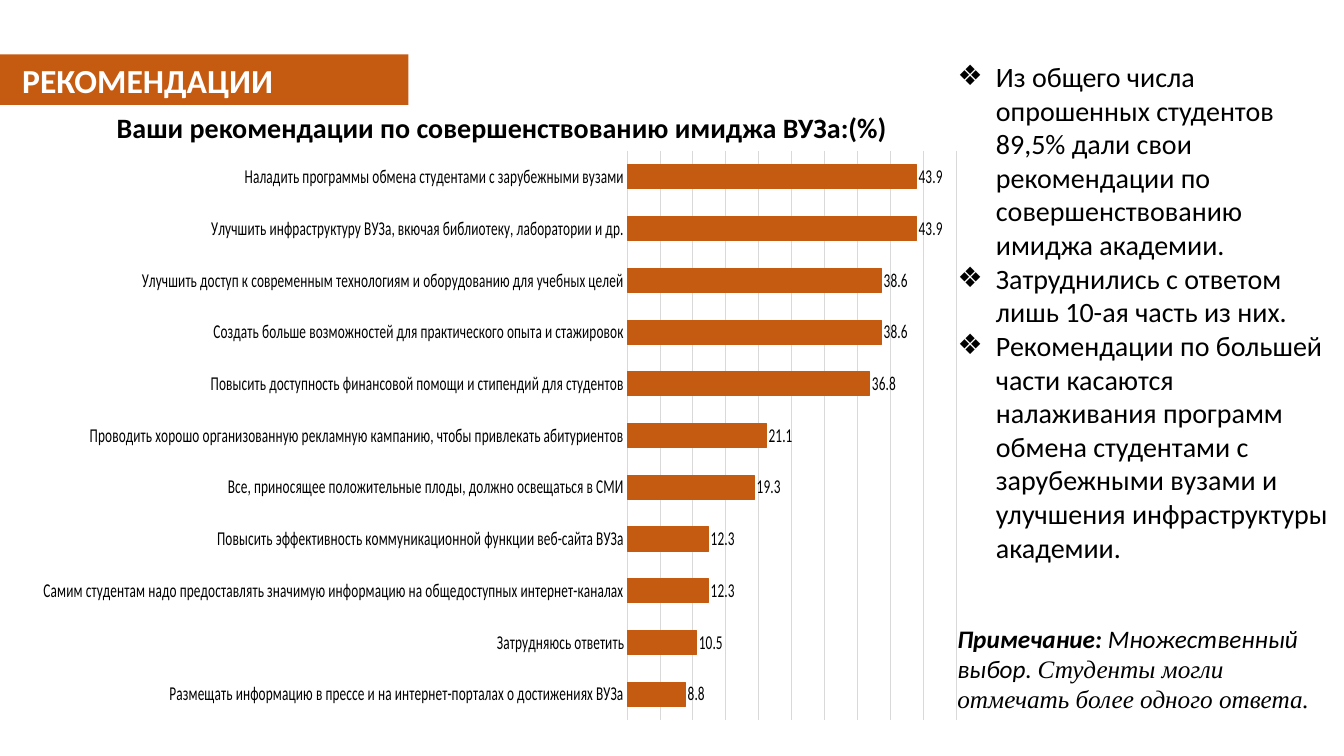
from dataclasses import dataclass

from lxml.etree import SubElement
from pptx import Presentation
from pptx.chart.data import CategoryChartData
from pptx.dml.color import RGBColor
from pptx.enum.chart import XL_CHART_TYPE, XL_LABEL_POSITION, XL_TICK_LABEL_POSITION, XL_TICK_MARK
from pptx.enum.text import MSO_ANCHOR, MSO_AUTO_SIZE, PP_ALIGN
from pptx.oxml.ns import qn
from pptx.util import Inches, Pt


@dataclass(frozen=True)
class Theme:
    accent: RGBColor = RGBColor.from_string("C55A11")
    text: RGBColor = RGBColor.from_string("000000")
    inverse: RGBColor = RGBColor.from_string("FFFFFF")
    grid: RGBColor = RGBColor.from_string("D9D9D9")
    font: str = "Calibri"
    note_font: str = "Times New Roman"
    title_size: int = 24
    body_size: int = 20
    note_size: int = 18
    chart_size: int = 14


@dataclass(frozen=True)
class Box:
    """Left, top, width and height in percent of the slide."""
    left: float
    top: float
    width: float
    height: float


THEME = Theme()
SLIDE_WIDTH, SLIDE_HEIGHT = Inches(13.33), Inches(7.5)
TITLE_BOX = Box(0, 7.2, 30.38, 6.67)
HEADING_BOX = Box(7.95, 14, 60.24, 5.87)
CHART_BOX = Box(3.23, 19.87, 69.32, 76.13)
FINDINGS_BOX = Box(70.5, 7.2, 29.5, 73.33)
NOTE_BOX = Box(70.5, 81.73, 29.5, 13.47)

FINDINGS = [
    "Из общего числа опрошенных студентов 89,5% дали свои рекомендации по "
    "совершенствованию имиджа академии.",
    "Затруднились с ответом лишь 10-ая часть из них.",
    "Рекомендации по большей части касаются налаживания программ обмена студентами "
    "с зарубежными вузами и улучшения инфраструктуры академии.",
]
RECOMMENDATIONS = {
    "Наладить программы обмена студентами с зарубежными вузами": 43.9,
    "Улучшить инфраструктуру ВУЗа, вкючая библиотеку, лаборатории и др.": 43.9,
    "Улучшить доступ к современным технологиям и оборудованию для учебных целей": 38.6,
    "Создать больше возможностей для практического опыта и стажировок": 38.6,
    "Повысить доступность финансовой помощи и стипендий для студентов": 36.8,
    "Проводить хорошо организованную рекламную кампанию, чтобы привлекать абитуриентов": 21.1,
    "Все, приносящее положительные плоды, должно освещаться в СМИ": 19.3,
    "Повысить эффективность коммуникационной функции веб-сайта ВУЗа": 12.3,
    "Самим студентам надо предоставлять значимую информацию на общедоступных "
    "интернет-каналах": 12.3,
    "Затрудняюсь ответить": 10.5,
    "Размещать информацию в прессе и на интернет-порталах о достижениях ВУЗа": 8.8,
}


def place(box):
    return (int(SLIDE_WIDTH * box.left / 100), int(SLIDE_HEIGHT * box.top / 100),
            int(SLIDE_WIDTH * box.width / 100), int(SLIDE_HEIGHT * box.height / 100))


def move(shape, box):
    shape.left, shape.top, shape.width, shape.height = place(box)


def set_all(target, values):
    for name, value in values.items():
        setattr(target, name, value)


def style_font(font, size, color=THEME.text, **values):
    set_all(font, {"name": THEME.font, "size": Pt(size), **values})
    font.color.rgb = color


def prepare_frame(frame, anchor=MSO_ANCHOR.TOP):
    set_all(frame, {"word_wrap": True, "auto_size": MSO_AUTO_SIZE.NONE,
                    "vertical_anchor": anchor})


def add_span(para, text, size, color=THEME.text, **values):
    set_all(para, {"alignment": PP_ALIGN.LEFT, "line_spacing": 1.0,
                   "space_before": Pt(0), "space_after": Pt(0)})
    span = para.add_run()
    span.text = text
    style_font(span.font, size, color, **values)


def add_title(page, box):
    title = page.shapes.title
    move(title, box)
    title.fill.solid()
    title.fill.fore_color.rgb = THEME.accent
    prepare_frame(title.text_frame, MSO_ANCHOR.MIDDLE)
    title.text_frame.margin_left = Inches(0.22)
    add_span(title.text_frame.paragraphs[0], "РЕКОМЕНДАЦИИ", THEME.title_size,
             THEME.inverse, bold=True)


def add_findings(page, box):
    body = page.placeholders[1]
    move(body, box)
    frame = body.text_frame
    prepare_frame(frame)
    for index, finding in enumerate(FINDINGS):
        para = frame.add_paragraph() if index else frame.paragraphs[0]
        add_span(para, finding, THEME.body_size)
        # Hanging diamond bullet
        properties = para._p.get_or_add_pPr()
        indent = Inches(0.38)
        properties.set("marL", str(indent))
        properties.set("indent", str(-indent))
        SubElement(properties, qn("a:buChar")).set("char", "❖")


def add_text(page, box, spans):
    frame = page.shapes.add_textbox(*place(box)).text_frame
    prepare_frame(frame)
    for text, size, values in spans:
        add_span(frame.paragraphs[0], text, size, **values)


def set_plot_layout(chart, **shares):
    plot_area = chart._chartSpace.chart.plotArea
    layout = plot_area.find(qn("c:layout"))
    if layout is None:
        layout = plot_area.makeelement(qn("c:layout"))
        plot_area.insert(0, layout)
    manual = SubElement(layout, qn("c:manualLayout"))
    settings = {"layoutTarget": "inner", "xMode": "edge", "yMode": "edge", **shares}
    for name, value in settings.items():
        SubElement(manual, qn(f"c:{name}")).set("val", str(value))


def add_recommendations_chart(page, box):
    data = CategoryChartData()
    data.categories = list(RECOMMENDATIONS)
    data.add_series("Series 1", list(RECOMMENDATIONS.values()))
    chart = page.shapes.add_chart(XL_CHART_TYPE.BAR_CLUSTERED, *place(box), data).chart
    set_all(chart, {"has_legend": False, "has_title": False})
    style_font(chart.font, THEME.chart_size)
    set_plot_layout(chart, x=0.45, y=0, w=0.52, h=0.99)

    # Bars and their values
    plot = chart.plots[0]
    set_all(plot, {"gap_width": 115, "overlap": -20, "vary_by_categories": False,
                   "has_data_labels": True})
    set_all(plot.data_labels, {"show_value": True, "position": XL_LABEL_POSITION.OUTSIDE_END})
    style_font(plot.data_labels.font, THEME.chart_size)
    bars = plot.series[0].format
    bars.fill.solid()
    bars.fill.fore_color.rgb = THEME.accent
    bars.line.color.rgb = THEME.accent
    bars.line.width = Pt(0.75)

    # Category axis, first answer on top, labels kept on one line
    answers = chart.category_axis
    set_all(answers, {"reverse_order": True, "major_tick_mark": XL_TICK_MARK.NONE,
                      "minor_tick_mark": XL_TICK_MARK.NONE, "has_major_gridlines": False,
                      "tick_label_position": XL_TICK_LABEL_POSITION.NEXT_TO_AXIS})
    style_font(answers.tick_labels.font, THEME.chart_size)
    label_frame = answers._element.find(qn("c:txPr")).find(qn("a:bodyPr"))
    label_frame.set("rot", "-60000000")
    label_frame.set("vert", "horz")
    answers.format.line.color.rgb = THEME.grid
    answers.format.line.width = Pt(1)

    # Hidden value axis with gridlines
    percents = chart.value_axis
    set_all(percents, {"minimum_scale": 0, "maximum_scale": 50, "major_unit": 5,
                       "has_major_gridlines": True, "visible": False})
    gridline = percents.major_gridlines.format.line
    gridline.color.rgb = THEME.grid
    gridline.width = Pt(0.75)


def build_recommendations(deck):
    page = deck.slides.add_slide(deck.slide_layouts[1])
    add_title(page, TITLE_BOX)
    add_findings(page, FINDINGS_BOX)
    add_text(page, HEADING_BOX, [("Ваши рекомендации по совершенствованию имиджа ВУЗа:(%)",
                                  THEME.body_size, {"bold": True})])
    add_recommendations_chart(page, CHART_BOX)
    add_text(page, NOTE_BOX, [
        ("Примечание: ", THEME.note_size, {"bold": True, "italic": True}),
        ("Множественный выбор. ", THEME.note_size, {"italic": True}),
        ("Студенты могли отмечать более одного ответа.", THEME.note_size,
         {"italic": True, "name": THEME.note_font})])


def main():
    deck = Presentation()
    deck.slide_width, deck.slide_height = SLIDE_WIDTH, SLIDE_HEIGHT
    build_recommendations(deck)
    deck.save("out.pptx")


if __name__ == "__main__":
    main()
